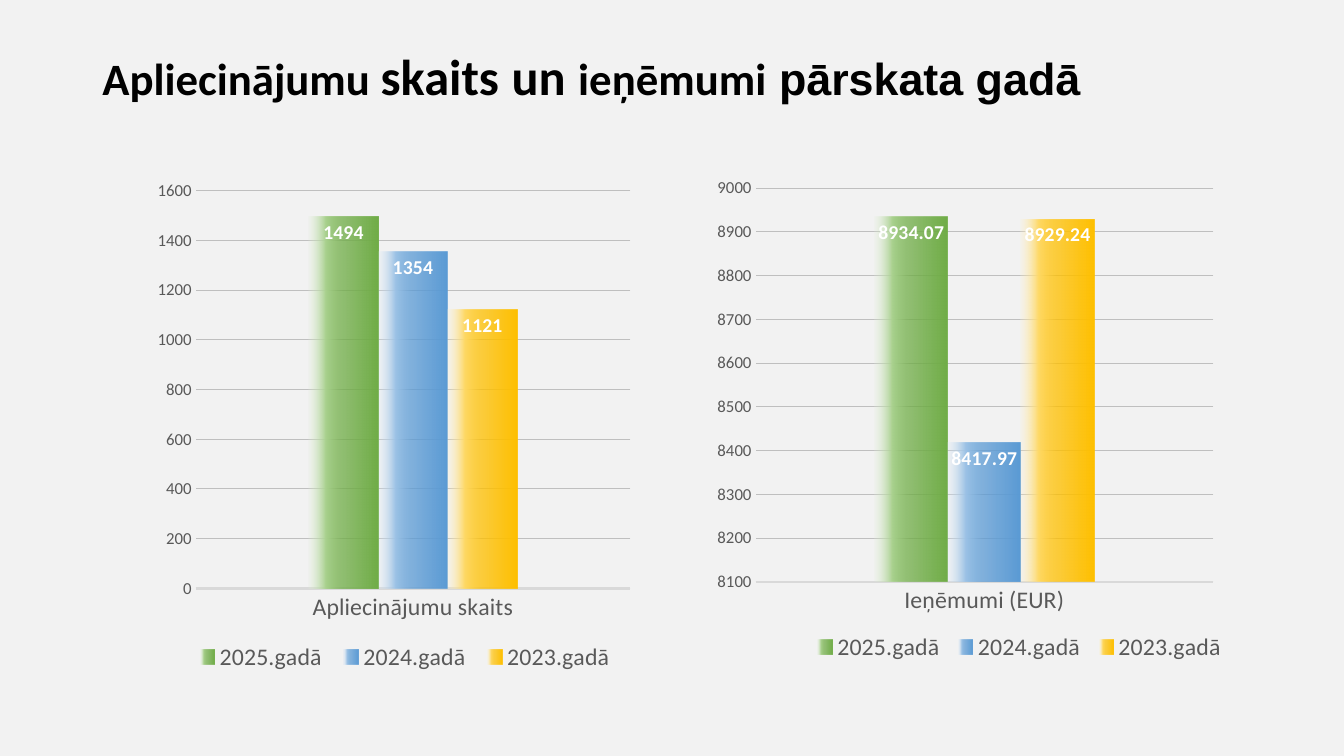
from dataclasses import dataclass

from pptx import Presentation
from pptx.chart.chart import Chart
from pptx.chart.data import CategoryChartData
from pptx.dml.color import RGBColor
from pptx.enum.chart import XL_CHART_TYPE, XL_LABEL_POSITION, XL_LEGEND_POSITION, XL_TICK_MARK
from pptx.enum.text import MSO_ANCHOR, MSO_AUTO_SIZE, PP_ALIGN
from pptx.oxml import parse_xml
from pptx.oxml.ns import nsdecls
from pptx.slide import Slide
from pptx.text.text import Font
from pptx.util import Inches, Pt

COLORS = {"page": "F2F2F2", "title": "000000", "text": "595959",
          "label": "FFFFFF", "grid": "BFBFBF", "axis": "D9D9D9"}
# Each year: base colour, lighter tint, palest tint
YEARS = {"2025.gadā": ("70AD47", "A9D18E", "E2F0D9"),
         "2024.gadā": ("5B9BD5", "9DC3E6", "DEEBF7"),
         "2023.gadā": ("FFC000", "FFD966", "FFF2CC")}
TITLE_SPANS = [("Apliecinājumu ", 32, "Calibri"), ("skaits", 36, "Calibri"),
               (" ", 32, "Arial"), ("un", 36, "Calibri"), (" ", 32, "Arial"),
               ("ieņēmumi", 32, "Calibri"), (" pārskata gadā", 32, "Arial")]

# Slide grid
WIDTH, HEIGHT = Inches(13.33), Inches(7.5)
COLUMNS, ROWS = 160, 90
Area = tuple[float, float, float, float]


@dataclass
class YearChart:
    category: str
    values: tuple[float, ...]
    area: Area  # columns and rows of the slide grid
    plot: Area  # percent of the chart
    legend: Area  # percent of the chart
    scale: tuple[float, float, float]  # minimum, maximum, step


CHARTS = [
    YearChart("Ieņēmumi (EUR)", (8934.07, 8417.97, 8929.24), (71.9, 20.28, 75.5, 60.72),
              (23.9, 3.5, 72.2, 77.2), (32, 89.5, 67, 8), (8100, 9000, 100)),
    YearChart("Apliecinājumu skaits", (1494, 1354, 1121), (2.76, 14.28, 80.78, 70.08),
              (25.4, 12, 64.1, 67.6), (24, 87.5, 64.5, 7.5), (0, 1600, 200)),
]


def place(area: Area) -> list[int]:
    units = (WIDTH / COLUMNS, HEIGHT / ROWS) * 2
    return [round(share * unit) for share, unit in zip(area, units)]


def color(name: str) -> RGBColor:
    return RGBColor.from_string(COLORS[name])


def style(font: Font, size: float, name: str, bold: bool = False) -> None:
    font.size, font.bold, font.name = Pt(size), bold, "Calibri"
    font.color.rgb = color(name)


def set_layout(parent, index: int, area: Area, inner: bool = False) -> None:
    for old in parent.xpath("c:layout"):
        parent.remove(old)
    target = '<c:layoutTarget val="inner"/>' if inner else ""
    modes = "".join(f'<c:{axis}Mode val="edge"/>' for axis in "xy")
    sizes = "".join(f'<c:{key} val="{share / 100:.3f}"/>' for key, share in zip("xywh", area))
    parent.insert(index, parse_xml(
        f'<c:layout {nsdecls("c")}><c:manualLayout>{target}{modes}{sizes}'
        "</c:manualLayout></c:layout>"))


def gradient(base: str, light: str, pale: str):
    stops = [(0, base, 100), (51, base, 75), (75, light, 100), (100, pale, 15)]
    marks = "".join(
        f'<a:gs pos="{position * 1000}"><a:srgbClr val="{tint}">'
        f'<a:alpha val="{alpha * 1000}"/></a:srgbClr></a:gs>'
        for position, tint, alpha in stops)
    return parse_xml(f'<a:gradFill {nsdecls("a")}><a:gsLst>{marks}</a:gsLst>'
                     '<a:lin ang="10800000" scaled="0"/></a:gradFill>')


def style_axes(chart: Chart, scale: tuple[float, float, float]) -> None:
    category, value = chart.category_axis, chart.value_axis
    for axis, size in ((category, 17), (value, 12)):
        axis.major_tick_mark = axis.minor_tick_mark = XL_TICK_MARK.NONE
        style(axis.tick_labels.font, size, "text")
    category.format.line.color.rgb = color("axis")
    category.format.line.width = Pt(1.5)
    value.format.line.fill.background()
    value.minimum_scale, value.maximum_scale, value.major_unit = scale
    grid = value.major_gridlines.format.line
    grid.color.rgb, grid.width = color("grid"), Pt(0.75)


def style_bars(chart: Chart) -> None:
    plot = chart.plots[0]
    plot.gap_width, plot.overlap, plot.vary_by_categories = 326, 0, False
    for series, node in zip(plot.series, chart.element.xpath(".//c:ser")):
        series.invert_if_negative = False
        series.format.fill.background()
        empty = node.xpath("c:spPr/a:noFill")[0]
        empty.getparent().replace(empty, gradient(*YEARS[series.name]))
        labels = series.data_labels
        labels.show_value = True
        labels.position = XL_LABEL_POSITION.INSIDE_END
        style(labels.font, 14, "label", bold=True)


def draw_chart(page: Slide, item: YearChart) -> None:
    data = CategoryChartData()
    data.categories = [item.category]
    for year, value in zip(YEARS, item.values):
        data.add_series(year, [value])
    chart = page.shapes.add_chart(
        XL_CHART_TYPE.COLUMN_CLUSTERED, *place(item.area), data).chart
    chart.has_title = False
    style(chart.font, 10, "title")
    style_axes(chart, item.scale)
    style_bars(chart)
    chart.has_legend = True
    chart.legend.position = XL_LEGEND_POSITION.BOTTOM
    chart.legend.include_in_layout = False
    style(chart.legend.font, 17, "text")
    set_layout(chart.element.xpath("c:chart/c:plotArea")[0], 0, item.plot, inner=True)
    set_layout(chart.element.xpath("c:chart/c:legend")[0], 1, item.legend)


def draw_title(page: Slide) -> None:
    title = page.shapes.title
    title.left, title.top, title.width, title.height = place((11, 4.8, 138, 9.24))
    frame = title.text_frame
    frame.auto_size = MSO_AUTO_SIZE.NONE
    frame.vertical_anchor = MSO_ANCHOR.MIDDLE
    para = frame.paragraphs[0]
    para.alignment, para.line_spacing = PP_ALIGN.LEFT, 0.9
    para.font.bold = True
    para.font.color.rgb = color("title")
    for text, size, name in TITLE_SPANS:
        span = para.add_run()
        span.text = text
        span.font.size, span.font.name = Pt(size), name


def main() -> None:
    deck = Presentation()
    deck.slide_width, deck.slide_height = WIDTH, HEIGHT
    page = deck.slides.add_slide(deck.slide_layouts[5])
    page.background.fill.solid()
    page.background.fill.fore_color.rgb = color("page")
    draw_title(page)
    for item in CHARTS:
        draw_chart(page, item)
    deck.save("out.pptx")


if __name__ == "__main__":
    main()
